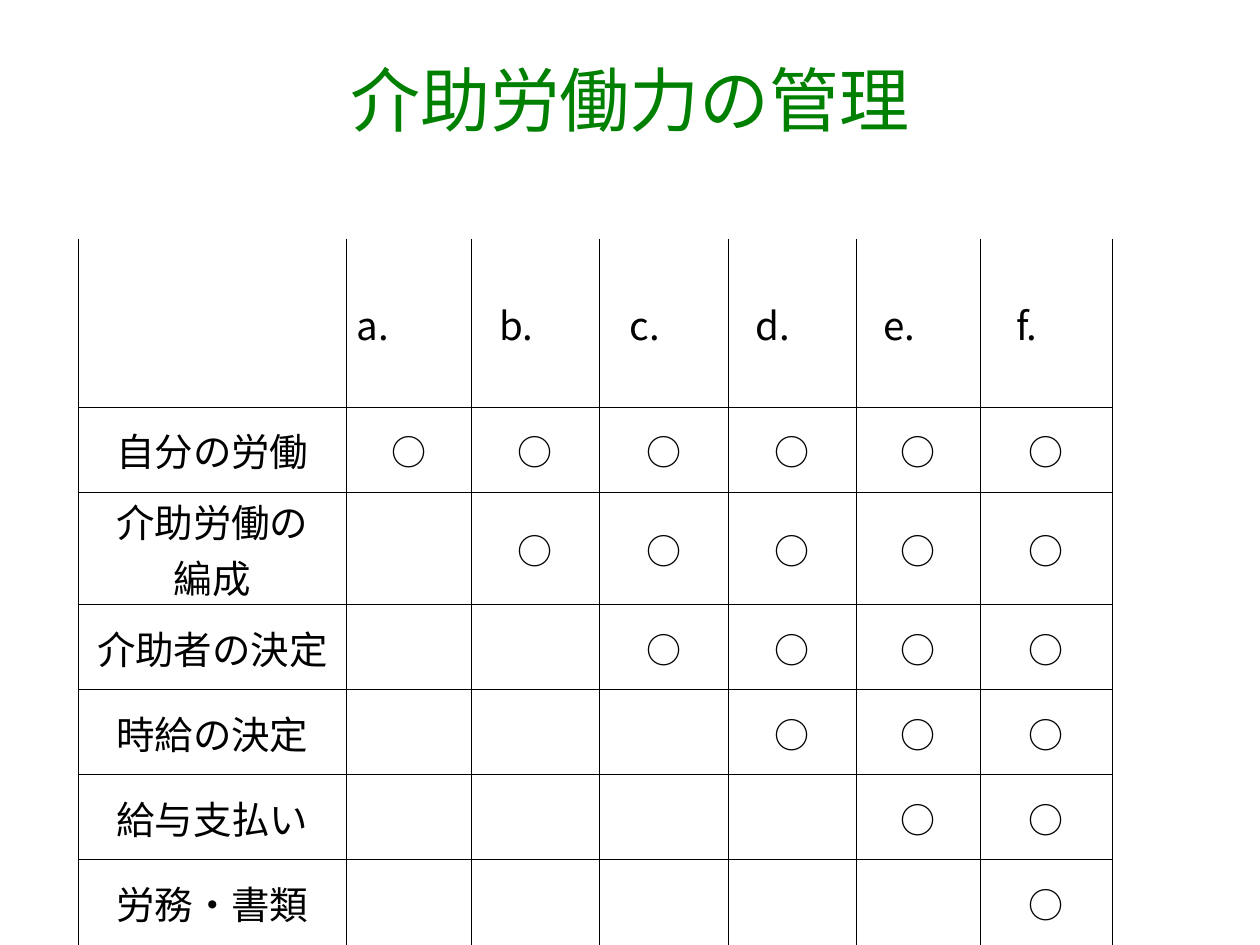
from dataclasses import dataclass

from lxml import etree
from pptx import Presentation
from pptx.dml.color import RGBColor
from pptx.enum import text
from pptx.oxml.ns import qn
from pptx.util import Inches, Pt

WIDTH, HEIGHT = Inches(10), Inches(7.5)
BLACK, GREEN = "000000", "008000"
CELL_FONT = "Noto Sans CJK JP"
CENTER, LEFT = text.PP_ALIGN.CENTER, text.PP_ALIGN.LEFT
COLUMNS = [21.3, 9.9, 10.2, 10.2, 10.2, 9.8, 10.5]
ROWS = [5.6, 17.76, 9, 11.86, 9, 9, 9, 9]
HEADINGS = ["a.　", "b.　", "c.　", "d.　", "e.　", "f.　"]
TASKS = [
    ["自分の労働"],
    ["介助労働の", "編成"],
    ["介助者の決定"],
    ["時給の決定"],
    ["給与支払い"],
    ["労務・書類"],
]


@dataclass(frozen=True)
class Style:
    size: float
    font: str = CELL_FONT
    color: str = BLACK
    align: text.PP_ALIGN = CENTER


LABEL = Style(22)
MARK = Style(20)
TITLE = Style(40, "Arial", GREEN)


def across(percent: float) -> int:
    return round(WIDTH * percent / 100)


def down(percent: float) -> int:
    return round(HEIGHT * percent / 100)


def rgb(color: str) -> RGBColor:
    return RGBColor.from_string(color)


def write(frame, lines: list[str], style: Style) -> None:
    for index, line in enumerate(lines):
        para = frame.paragraphs[0] if index == 0 else frame.add_paragraph()
        para.text = line
        para.alignment = style.align
        para.font.size = Pt(style.size)
        para.font.name = style.font
        para.font.color.rgb = rgb(style.color)


def add_borders(cell, color: str, points: float) -> None:
    properties = cell._tc.get_or_add_tcPr()
    for index, side in enumerate(("lnL", "lnR", "lnT", "lnB")):
        line = etree.Element(qn(f"a:{side}"), w=str(Pt(points)))
        fill = etree.SubElement(line, qn("a:solidFill"))
        etree.SubElement(fill, qn("a:srgbClr"), val=color)
        properties.insert(index, line)


def add_title(page, title: str) -> None:
    box = page.shapes.add_textbox(0, down(2.13), WIDTH, down(16.67))
    frame = box.text_frame
    frame.word_wrap = True
    frame.vertical_anchor = text.MSO_ANCHOR.MIDDLE
    write(frame, [title], TITLE)


def add_grid(page):
    grid = page.shapes.add_table(
        len(ROWS), len(COLUMNS), across(6.2), down(19.73),
        across(sum(COLUMNS)), down(sum(ROWS)),
    ).table
    grid.first_row = grid.horz_banding = False
    for column, share in zip(grid.columns, COLUMNS):
        column.width = across(share)
    for index, (row, share) in enumerate(zip(grid.rows, ROWS)):
        row.height = down(share)
        for cell in row.cells:
            cell.fill.background()
            cell.vertical_anchor = text.MSO_ANCHOR.MIDDLE
            cell.margin_left = cell.margin_right = cell.margin_top = Inches(0.01)
            cell.margin_bottom = 0
            if index > 0:
                add_borders(cell, BLACK, 0.5)
    grid.cell(0, 1).merge(grid.cell(0, 2))
    return grid


def fill_grid(grid) -> None:
    for column, heading in enumerate(HEADINGS, 1):
        style = Style(22, align=LEFT) if column == 1 else LABEL
        write(grid.cell(1, column).text_frame, [heading], style)
    grid.cell(1, 1).margin_left = Inches(0.08)
    for step, task in enumerate(TASKS):
        write(grid.cell(step + 2, 0).text_frame, task, LABEL)
        for column in range(step + 1, len(COLUMNS)):
            write(grid.cell(step + 2, column).text_frame, ["○"], MARK)


def main() -> None:
    deck = Presentation()
    deck.slide_width, deck.slide_height = WIDTH, HEIGHT
    page = deck.slides.add_slide(deck.slide_layouts[6])
    fill_grid(add_grid(page))
    add_title(page, "介助労働力の管理")
    deck.save("out.pptx")


if __name__ == "__main__":
    main()
